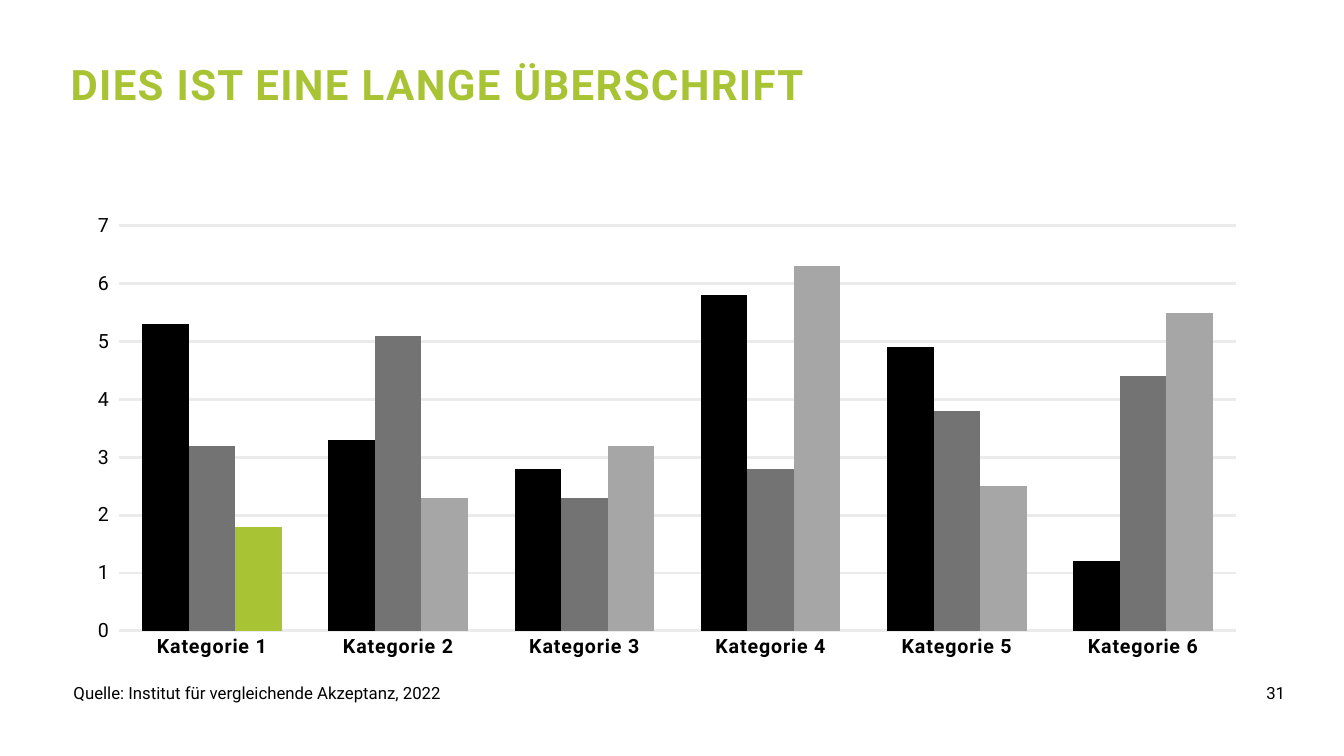
from dataclasses import dataclass

from lxml import etree
from pptx import Presentation
from pptx import util as u
from pptx.chart.data import CategoryChartData
from pptx.dml.color import RGBColor
from pptx.enum import chart as ch
from pptx.enum import text as tx
from pptx.oxml import ns

Pt = u.Pt


@dataclass(frozen=True)
class Theme:
    face: str = "Roboto"
    ink: str = "000000"
    lime: str = "A8C434"
    grid: str = "EBEBEB"
    bars: tuple = ("000000", "737373", "A6A6A6")
    head: int = 30
    axis: int = 14
    note: int = 12


T = Theme()
CATS = [f"Kategorie {n}" for n in range(1, 7)]
ROWS = [
    (5.3, 3.3, 2.8, 5.8, 4.9, 1.2),
    (3.2, 5.1, 2.3, 2.8, 3.8, 4.4),
    (1.8, 2.3, 3.2, 6.3, 2.5, 5.5),
]


def rgb(code):
    return RGBColor.from_string(code)


def style(font, size, color=T.ink, bold=False):
    font.name, font.size, font.bold = T.face, Pt(size), bold
    font.color.rgb = rgb(color)


def write(shape, words, size=T.note, color=T.ink, bold=False,
          align=tx.PP_ALIGN.LEFT, track=0, lead=1.0):
    frame = shape.text_frame
    frame.word_wrap = True
    frame.auto_size = tx.MSO_AUTO_SIZE.NONE
    frame.vertical_anchor = tx.MSO_ANCHOR.TOP
    frame.margin_left = frame.margin_right = 0
    frame.margin_top = frame.margin_bottom = 0
    para = frame.paragraphs[0]
    para.alignment, para.line_spacing = align, lead
    run = para.add_run()
    run.text = words
    style(run.font, size, color, bold)
    run.font._element.set("spc", str(track))


def place(shape, box):
    shape.left, shape.top, shape.width, shape.height = map(Pt, box)


def title(slide, box, words):
    head = slide.shapes.title
    place(head, box)
    write(head, words, size=T.head, color=T.lime, bold=True, track=100, lead=0.85)


def layout(chart, x, y, w, h):
    """Fix the inner plot area as fractions of the chart."""
    plot = chart._chartSpace.chart.plotArea
    for old in plot.findall(ns.qn("c:layout")):
        plot.remove(old)
    area = etree.Element(ns.qn("c:layout"))
    plot.insert(0, area)
    hand = etree.SubElement(area, ns.qn("c:manualLayout"))
    parts = dict(layoutTarget="inner", xMode="edge", yMode="edge", x=x, y=y, w=w, h=h)
    for tag, val in parts.items():
        etree.SubElement(hand, ns.qn(f"c:{tag}")).set("val", str(val))


def columns(slide, box):
    data = CategoryChartData()
    data.categories = CATS
    for n, row in enumerate(ROWS, 1):
        data.add_series(f"Series {n}", row)
    kind = ch.XL_CHART_TYPE.COLUMN_CLUSTERED
    chart = slide.shapes.add_chart(kind, *map(Pt, box), data).chart
    chart.has_legend = chart.has_title = False
    style(chart.font, T.axis)
    layout(chart, 0.04, 0.05, 0.94, 0.87)

    # Bars, with the first of the last series picked out
    plot = chart.plots[0]
    plot.gap_width, plot.overlap, plot.vary_by_categories = 100, 0, False
    for ser, color in zip(plot.series, T.bars):
        ser.invert_if_negative = False
        ser.format.fill.solid()
        ser.format.fill.fore_color.rgb = rgb(color)
    mark = plot.series[-1].points[0].format.fill
    mark.solid()
    mark.fore_color.rgb = rgb(T.lime)

    # Axes
    cat, val = chart.category_axis, chart.value_axis
    for axis, bold in ((cat, True), (val, False)):
        axis.format.line.fill.background()
        style(axis.tick_labels.font, T.axis, bold=bold)
    cat.tick_labels.font._element.set("spc", "50")
    cat.major_tick_mark = ch.XL_TICK_MARK.NONE
    val.major_tick_mark = ch.XL_TICK_MARK.OUTSIDE
    val.minimum_scale, val.maximum_scale, val.major_unit = 0, 7, 1
    val.tick_labels.number_format = "0"
    val.tick_labels.number_format_is_linked = False
    line = val.major_gridlines.format.line
    line.color.rgb, line.width = rgb(T.grid), Pt(2)


def footer(slide, box, source, page):
    x, y, w, h = box
    num = 155
    note = slide.shapes.add_textbox(*map(Pt, (x, y, w - num, h)))
    write(note, source)
    count = slide.shapes.add_textbox(*map(Pt, (x + w - num, y, num, h)))
    write(count, page, align=tx.PP_ALIGN.RIGHT)


def main():
    prs = Presentation()
    prs.slide_width, prs.slide_height = Pt(960), Pt(540)
    slide = prs.slides.add_slide(prs.slide_layouts[5])
    title(slide, (50.4, 47.5, 590, 80), "DIES IST EINE LANGE ÜBERSCHRIFT")
    columns(slide, (51, 144.7, 849, 332.6))
    footer(slide, (52.5, 487.5, 865.5, 29),
           "Quelle: Institut für vergleichende Akzeptanz, 2022", "31")
    prs.save("out.pptx")


if __name__ == "__main__":
    main()
